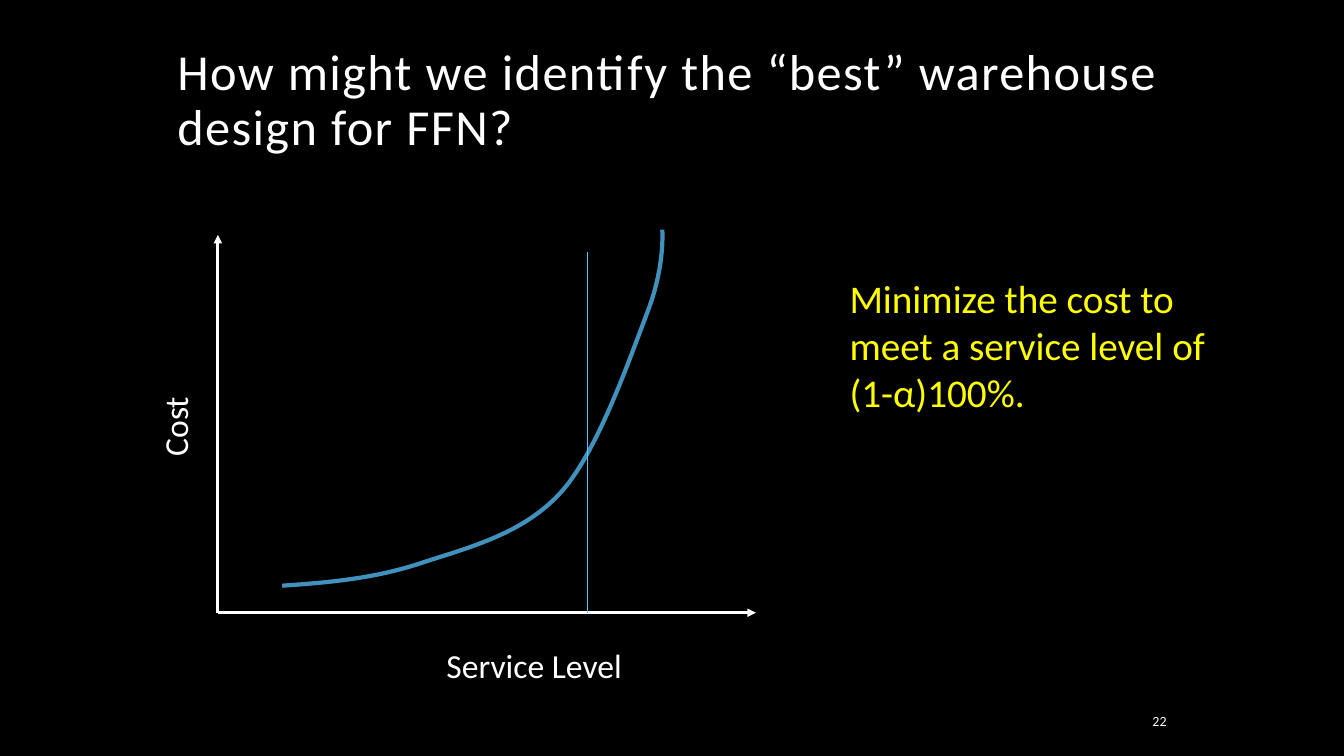
from dataclasses import dataclass

from lxml.etree import SubElement
from pptx import Presentation
from pptx.dml.color import RGBColor
from pptx.enum.shapes import MSO_CONNECTOR
from pptx.enum.text import MSO_ANCHOR, PP_ALIGN
from pptx.oxml.ns import qn
from pptx.util import Cm, Pt


@dataclass(frozen=True)
class Theme:
    font: str = "Calibri"
    background: str = "000000"
    text: str = "FFFFFF"
    accent: str = "FFFF00"
    curve: str = "4092BD"
    marker: str = "56C5FF"
    title_size: int = 36
    note_size: int = 28
    label_size: int = 24
    number_size: int = 10


class SlideBuilder:
    def __init__(self, slide, theme):
        self.slide = slide
        self.theme = theme
        fill = slide.background.fill
        fill.solid()
        fill.fore_color.rgb = RGBColor.from_string(theme.background)

    def text(self, words, box, size, color=None, wrap=True, rotation=0,
             align=PP_ALIGN.LEFT, anchor=MSO_ANCHOR.TOP, line_spacing=None, tracking=0):
        sp = self.slide.shapes.add_textbox(*(Cm(v) for v in box))
        sp.rotation = rotation
        tf = sp.text_frame
        tf.word_wrap = wrap
        tf.vertical_anchor = anchor
        p = tf.paragraphs[0]
        p.alignment = align
        if line_spacing:
            p.line_spacing = line_spacing
        r = p.add_run()
        r.text = words
        r.font.name = self.theme.font
        r.font.size = Pt(size)
        r.font.color.rgb = RGBColor.from_string(color or self.theme.text)
        if tracking:
            r.font._element.set("spc", str(tracking * 100))

    def line(self, start, end, color, width, arrow=False):
        points = (Cm(v) for v in (*start, *end))
        sp = self.slide.shapes.add_connector(MSO_CONNECTOR.STRAIGHT, *points)
        sp.line.color.rgb = RGBColor.from_string(color)
        sp.line.width = Pt(width)
        if arrow:
            SubElement(sp.line._get_or_add_ln(), qn("a:tailEnd"), type="triangle")
        SubElement(sp._element.spPr, qn("a:effectLst"))

    def curve(self, points, color, width, steps=16):
        """Draw chained cubic Béziers: a start point, then three points per segment."""
        samples = []
        for i in range(0, len(points) - 1, 3):
            for step in range(1, steps + 1):
                t = step / steps
                weights = ((1 - t) ** 3, 3 * t * (1 - t) ** 2, 3 * t ** 2 * (1 - t), t ** 3)
                x, y = (sum(w * v for w, v in zip(weights, axis))
                        for axis in zip(*points[i:i + 4]))
                samples.append((Cm(x), Cm(y)))
        x, y = points[0]
        builder = self.slide.shapes.build_freeform(Cm(x), Cm(y))
        builder.add_line_segments(samples, close=False)
        sp = builder.convert_to_shape()
        sp.shadow.inherit = False
        sp.fill.background()
        sp.line.color.rgb = RGBColor.from_string(color)
        sp.line.width = Pt(width)


def main():
    prs = Presentation()
    prs.slide_width, prs.slide_height = Cm(33.87), Cm(19.05)
    theme = Theme()
    s = SlideBuilder(prs.slides.add_slide(prs.slide_layouts[6]), theme)

    # Title
    s.text("How might we identify the “best” warehouse design for FFN?",
           (4.22, 1.07, 25.4, 3.81), theme.title_size, line_spacing=0.9, tracking=1)

    # Axes
    origin_x, origin_y = 5.49, 15.44
    for tip in ((19.05, origin_y), (origin_x, 5.92)):
        s.line((origin_x, origin_y), tip, theme.text, 2, arrow=True)

    # Cost curve
    s.curve([(7.11, 14.76),
             (8.28, 14.68), (9.47, 14.58), (10.67, 14.17),
             (11.84, 13.79), (13.23, 13.44), (14.17, 12.37),
             (15.11, 11.3), (15.93, 8.86), (16.36, 7.75),
             (16.76, 6.65), (16.69, 5.79), (16.69, 5.79)], theme.curve, 3)

    # Axis labels
    s.text("Service Level", (11, 16.13, 5.16, 1.27), theme.label_size, wrap=False)
    s.text("Cost", (3.35, 10.06, 2.11, 1.27), theme.label_size, wrap=False, rotation=270)

    # Required service level
    service_x = 14.81
    s.line((service_x, origin_y), (service_x, 6.35), theme.marker, 0.5)

    # Objective
    s.text("Minimize the cost to meet a service level of (1-α)100%.",
           (21.16, 6.78, 9.53, 3.84), theme.note_size, theme.accent)

    # Slide number
    s.text("22", (27.31, 17.78, 2.34, 0.76), theme.number_size,
           align=PP_ALIGN.RIGHT, anchor=MSO_ANCHOR.MIDDLE)

    prs.save("out.pptx")


if __name__ == "__main__":
    main()
